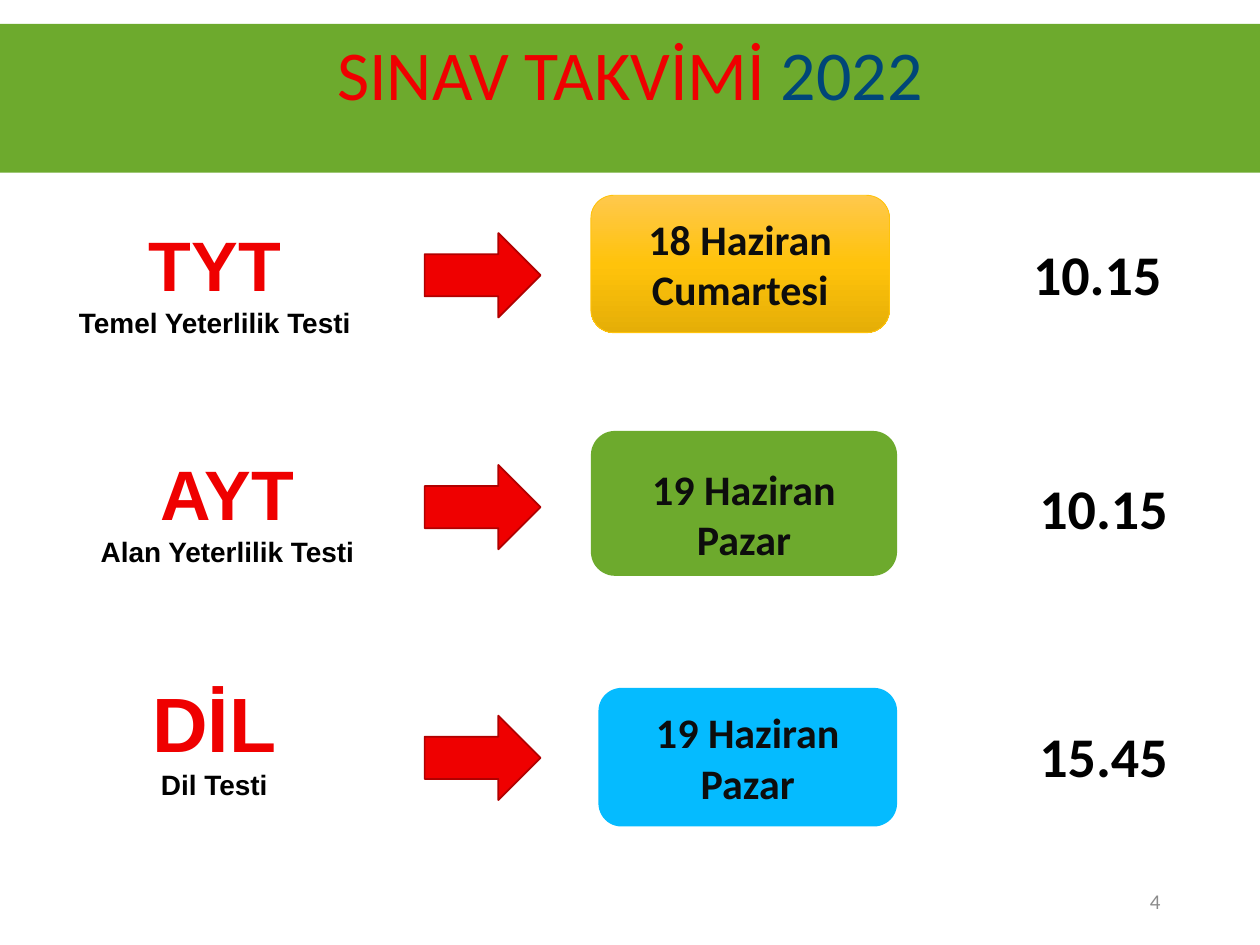
import copy
import dataclasses

import pptx
import pptx.dml.color
import pptx.enum.shapes
import pptx.enum.text
import pptx.oxml.ns
import pptx.util

SHAPE = pptx.enum.shapes.MSO_SHAPE
ALIGN = pptx.enum.text.PP_ALIGN
ANCHOR = pptx.enum.text.MSO_ANCHOR
COLS, ROWS = 100, 75


@dataclasses.dataclass(frozen=True)
class Theme:
    body: str = "Calibri"
    label: str = "Arial"
    red: str = "EF0000"
    dark_red: str = "B10000"
    navy: str = "004678"
    green: str = "6DAA2D"
    blue: str = "05BBFF"
    gold: tuple = ("FFC84C", "FFC30B", "E5AE07")
    ink: str = "0D0D0D"
    black: str = "000000"
    grey: str = "8C8C8C"
    title_size: int = 40
    time_size: int = 32
    date_size: int = 24
    name_size: int = 16
    number_size: int = 12


def rgb(value):
    return pptx.dml.color.RGBColor.from_string(value)


class Deck:
    def __init__(self, theme):
        self.theme = theme
        self.prs = pptx.Presentation()
        self.prs.slide_width = pptx.util.Inches(10)
        self.prs.slide_height = pptx.util.Inches(7.5)
        self.slide = self.prs.slides.add_slide(self.prs.slide_layouts[5])

    def box(self, col, row, cols, rows):
        """Turn grid columns and rows into left, top, width and height."""
        x, y = self.prs.slide_width / COLS, self.prs.slide_height / ROWS
        return [round(v) for v in (col * x, row * y, cols * x, rows * y)]

    def set_text(self, sp, paragraphs, align=ALIGN.CENTER, **frame):
        """Fill a shape with paragraphs, each a list of (text, format) runs."""
        tf = sp.text_frame
        settings = {"word_wrap": True, "auto_size": pptx.enum.text.MSO_AUTO_SIZE.NONE,
                    "vertical_anchor": ANCHOR.TOP, **frame}
        for name, value in settings.items():
            setattr(tf, name, value)
        for i, runs in enumerate(paragraphs):
            p = tf.paragraphs[0] if i == 0 else tf.add_paragraph()
            p.alignment = align
            for text, style in runs:
                r = p.add_run()
                r.text = text
                font = {"name": self.theme.body, "bold": True, **style}
                r.font.color.rgb = rgb(font.pop("color"))
                r.font.size = pptx.util.Pt(font.pop("size"))
                for name, value in font.items():
                    setattr(r.font, name, value)

    def title(self, cell, runs):
        sp = self.slide.shapes.title
        sp.left, sp.top, sp.width, sp.height = self.box(*cell)
        sp.fill.solid()
        sp.fill.fore_color.rgb = rgb(self.theme.green)
        self.set_text(sp, [runs])

    def text(self, cell, paragraphs, **options):
        sp = self.slide.shapes.add_textbox(*self.box(*cell))
        self.set_text(sp, paragraphs, **options)

    def shape(self, kind, cell, fill, line=None, width=1):
        sp = self.slide.shapes.add_shape(kind, *self.box(*cell))
        sp.shadow.inherit = False
        if isinstance(fill, tuple):
            self.gradient(sp, fill)
        else:
            sp.fill.solid()
            sp.fill.fore_color.rgb = rgb(fill)
        if line:
            sp.line.color.rgb = rgb(line)
            sp.line.width = pptx.util.Pt(width)
        else:
            sp.line.fill.background()
        return sp

    def gradient(self, sp, colors):
        """Apply a top-to-bottom gradient with evenly spaced stops."""
        sp.fill.gradient()
        sp.fill.gradient_angle = 270
        stops = sp.element.spPr.find(".//" + pptx.oxml.ns.qn("a:gsLst"))
        while len(stops) < len(colors):
            stops.append(copy.deepcopy(stops[0]))
        for i, (stop, color) in enumerate(zip(sp.fill.gradient_stops, colors)):
            stop.color.rgb = rgb(color)
            stop.position = i / (len(colors) - 1)

    def exam(self, code, name, label_cell, code_size):
        t = self.theme
        self.text(label_cell, [
            [(code, {"size": code_size, "color": t.red, "name": t.label})],
            [(name, {"size": t.name_size, "color": t.black, "name": t.label})]])

    def arrow(self, row):
        self.shape(SHAPE.RIGHT_ARROW, (33.7, row, 9.2, 6.7), self.theme.red, self.theme.dark_red)

    def date(self, cell, lines, fill, line=None, drop=0):
        """Draw a date card; drop is extra top inset in points."""
        t = self.theme
        sp = self.shape(SHAPE.ROUNDED_RECTANGLE, cell, fill, line, 0.5)
        style = {"size": t.date_size, "color": t.ink}
        self.set_text(sp, [[(text, style)] for text in lines], vertical_anchor=ANCHOR.MIDDLE,
                      margin_top=pptx.util.Pt(3.6 + drop))

    def time(self, col, row, text):
        t = self.theme
        self.text((col, row, 17.9, 6.4), [[(text, {"size": t.time_size, "color": t.black})]],
                  align=ALIGN.LEFT)

    def number(self, cell, text):
        t = self.theme
        style = {"size": t.number_size, "color": t.grey, "bold": False}
        self.text(cell, [[(text, style)]], align=ALIGN.RIGHT, vertical_anchor=ANCHOR.MIDDLE)


def main():
    t = Theme()
    deck = Deck(t)
    heading = {"size": t.title_size, "bold": False}
    deck.title((0, 1.9, 100, 11.8), [("SINAV TAKVİMİ ", {**heading, "color": t.red}),
                                     ("2022", {**heading, "color": t.navy})])

    exams = [
        {"exam": ("TYT", "Temel Yeterlilik Testi", (4.1, 17.1, 25.9, 10.4), 40),
         "row": 18.5,
         "date": ((46.9, 15.5, 23.7, 10.9), ["18 Haziran", "Cumartesi"], t.gold, t.gold[1]),
         "time": (81, 18.5, "10.15")},
        {"exam": ("AYT", "Alan Yeterlilik Testi", (6.4, 35.3, 23.3, 10.4), 40),
         "row": 36.9,
         "date": ((46.9, 34.2, 24.3, 11.5), ["19 Haziran Pazar"], t.green, None, 12),
         "time": (81.5, 37.1, "10.15")},
        {"exam": ("DİL", "Dil Testi", (6.4, 53.1, 21.2, 11.1), 44),
         "row": 56.8,
         "date": ((47.5, 54.6, 23.7, 11), ["19 Haziran Pazar"], t.blue),
         "time": (81.5, 56.8, "15.45")},
    ]
    for exam in exams:
        deck.exam(*exam["exam"])
        deck.arrow(exam["row"])
        deck.date(*exam["date"])
        deck.time(*exam["time"])

    deck.number((70.6, 69.5, 22.5, 4), "4")
    deck.prs.save("out.pptx")


if __name__ == "__main__":
    main()
